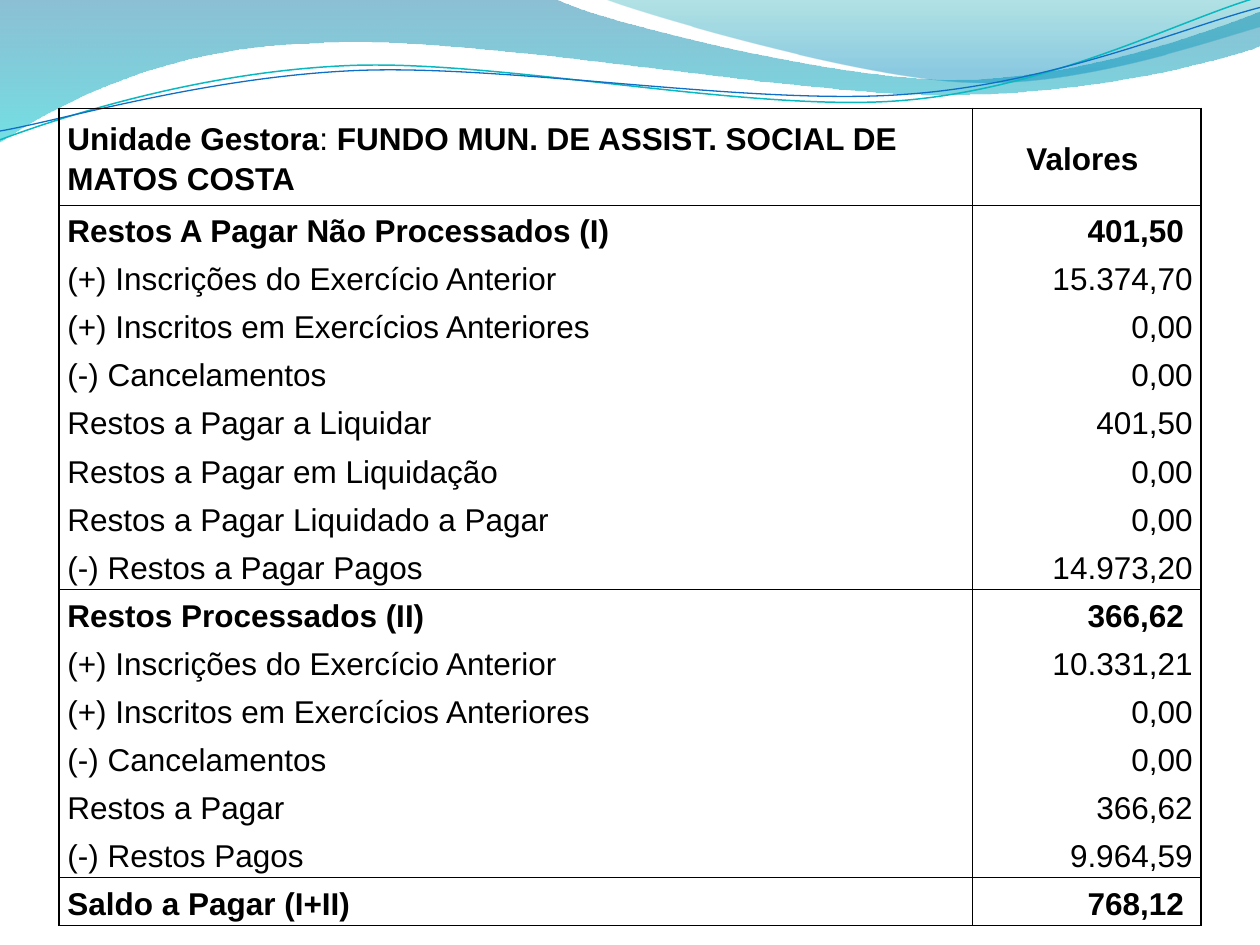
from math import cos, radians, sin
from lxml.etree import SubElement
from pptx import Presentation
from pptx.dml.color import RGBColor
from pptx.enum.text import MSO_ANCHOR as Anchor, PP_ALIGN as Align
from pptx.oxml import parse_xml
from pptx.oxml.ns import nsdecls, qn
from pptx.util import Inches, Pt

BLACK = RGBColor(0, 0, 0)
TEAL = RGBColor(0x0A, 0xB8, 0xBF)
BLUE = RGBColor(0x0F, 0x6F, 0xC6)
NO_STYLE = "{2D5ABB26-0587-4C30-8999-92F81FD0307C}"

# Table content: each group opens with a bold row
HEAD = [("Unidade Gestora", True), (": ", False),
        ("FUNDO MUN. DE ASSIST. SOCIAL DE MATOS COSTA", True)]
GROUPS = [
    [("Restos A Pagar Não Processados (I)", "401,50 "),
     ("(+) Inscrições do Exercício Anterior", "15.374,70"),
     ("(+) Inscritos em Exercícios Anteriores", "0,00"),
     ("(-) Cancelamentos", "0,00"),
     ("Restos a Pagar a Liquidar", "401,50"),
     ("Restos a Pagar em Liquidação", "0,00"),
     ("Restos a Pagar Liquidado a Pagar", "0,00"),
     ("(-) Restos a Pagar Pagos", "14.973,20")],
    [("Restos Processados (II)", "366,62 "),
     ("(+) Inscrições do Exercício Anterior", "10.331,21"),
     ("(+) Inscritos em Exercícios Anteriores", "0,00"),
     ("(-) Cancelamentos", "0,00"),
     ("Restos a Pagar", "366,62"),
     ("(-) Restos Pagos", "9.964,59")],
    [("Saldo a Pagar (I+II)", "768,12 ")],
]
COLS = (7.25, 1.81)
LEFT, TOP, HEIGHT, HEAD_H = 0.47, 0.86, 6.49, 0.77

# Waves: a pair is a straight step, six numbers are a Bézier step
BANDS = [
    ([(0, 0), (4.4, -0.01), (4.76, 0.17, 6.64, 0.63, 7.58, 0.63),
      (8.53, 0.63, 9.58, 0.26, 10, 0.09), (10.01, 0.36),
      (9.83, 0.44, 8.7, 0.76, 7.46, 0.75), (6.22, 0.75, 3.82, 0.28, 2.57, 0.34),
      (1.29, 0.36, 0.46, 0.83, -0.01, 1.13)],
     [(0, RGBColor(0, 0x74, 0xA1), 45), (1, RGBColor(0, 0xC6, 0xCF), 55)]),
    ([(4.79, -0.01), (5.09, 0.11, 6.82, 0.62, 7.69, 0.65),
      (8.56, 0.69, 9.61, 0.32, 10, 0.21), (10, 0)],
     [(0, RGBColor(0, 0xA1, 0xA9), 30), (0.8, RGBColor(0, 0x8B, 0xBF), 45)]),
]
TILT = 357.3
LINES = [
    ([(0, 1.11), (0.48, 0.93, 1.58, 0.57, 2.77, 0.52),
      (3.95, 0.47, 5.93, 0.89, 7.13, 0.8), (8.33, 0.71, 9.38, 0.15, 9.98, -0.02)],
     TEAL, 0.85, (4.99, 0.575)),
    ([(0, 1.04), (0.47, 0.96, 1.64, 0.61, 2.83, 0.56),
      (4.03, 0.51, 5.97, 0.84, 7.17, 0.75), (8.36, 0.67, 9.41, 0.21, 10, 0.06)],
     BLUE, 0.75, (5, 0.59)),
]


def turn(step, mid, angle):
    """Turn every point of a step clockwise about mid."""
    c, s = cos(radians(angle)), sin(radians(angle))
    out = []
    for x, y in zip(step[::2], step[1::2]):
        dx, dy = x - mid[0], y - mid[1]
        out += [mid[0] + dx * c - dy * s, mid[1] + dx * s + dy * c]
    return tuple(out)


def draw(slide, steps, close):
    """Lay out all points as a freeform, then join them into Bézier curves."""
    pts = [(Inches(x), Inches(y)) for step in steps
           for x, y in zip(step[::2], step[1::2])]
    pen = slide.shapes.build_freeform(*pts[0])
    pen.add_line_segments(pts[1:], close=close)
    shape = pen.convert_to_shape()
    shape.shadow.inherit = False
    legs = iter(list(shape._element.iter(qn("a:lnTo"))))
    for step in steps[1:]:
        leg = next(legs)
        if len(step) == 6:
            leg.addprevious(parse_xml(f'<a:cubicBezTo {nsdecls("a")}/>'))
            curve = leg.getprevious()
            for part in (leg, next(legs), next(legs)):
                curve.append(part[0])
                part.getparent().remove(part)
    return shape


def add_band(slide, steps, stops):
    shape = draw(slide, steps, True)
    shape.line.fill.background()
    shape.fill.gradient()
    shape.fill.gradient_angle = 270
    for stop, (pos, color, alpha) in zip(shape.fill.gradient_stops, stops):
        stop.position = pos
        stop.color.rgb = color
        tint = stop.color._xFill.find(qn("a:srgbClr"))
        SubElement(tint, qn("a:alpha")).set("val", str(alpha * 1000))


def add_wave(slide, steps, color, width, mid):
    shape = draw(slide, [turn(step, mid, -TILT) for step in steps], False)
    shape.rotation = TILT
    shape.fill.background()
    shape.line.color.rgb = color
    shape.line.width = Pt(width)


def write(cell, runs, align=Align.LEFT, size=18, font="Arial", color=BLACK):
    cell.vertical_anchor = Anchor.MIDDLE
    cell.margin_left = cell.margin_right = Pt(4.7)
    cell.margin_top = cell.margin_bottom = Inches(0.01)
    para = cell.text_frame.paragraphs[0]
    para.alignment, para.line_spacing = align, 1.15
    for text, bold in runs:
        run = para.add_run()
        run.text = text
        run.font.size, run.font.name, run.font.bold = Pt(size), font, bold
        run.font.color.rgb = color


def edge(cell, sides):
    """Draw black borders on the named sides only, then clear the fill."""
    props = cell._tc.get_or_add_tcPr()
    solid = f'<a:solidFill><a:srgbClr val="{BLACK}"/></a:solidFill>'
    for side in "LRTB":
        paint = solid if side in sides else "<a:noFill/>"
        props.append(parse_xml(
            f'<a:ln{side} {nsdecls("a")} w="12700">{paint}</a:ln{side}>'))
    cell.fill.background()


def add_grid(slide):
    rows = [(HEAD, [("Valores ", True)], "LRTB")]
    for group in GROUPS:
        for i, (name, value) in enumerate(group):
            sides = "LR" + "T" * (i == 0) + "B" * (i == len(group) - 1)
            rows.append(([(name, i == 0)], [(value, i == 0)], sides))
    table = slide.shapes.add_table(
        len(rows), len(COLS), Inches(LEFT), Inches(TOP),
        Inches(sum(COLS)), Inches(HEIGHT)).table
    table.first_row = table.horz_banding = False
    table._tbl.tblPr.find(qn("a:tableStyleId")).text = NO_STYLE
    for col, width in zip(table.columns, COLS):
        col.width = Inches(width)
    row_h = (HEIGHT - HEAD_H) / (len(rows) - 1)
    for r, (name, value, sides) in enumerate(rows):
        table.rows[r].height = Inches(row_h if r else HEAD_H)
        write(table.cell(r, 0), name)
        write(table.cell(r, 1), value, align=Align.RIGHT if r else Align.CENTER)
        for c in range(len(COLS)):
            edge(table.cell(r, c), sides)


def main():
    deck = Presentation()
    deck.slide_width, deck.slide_height = Inches(10), Inches(7.5)
    slide = deck.slides.add_slide(deck.slide_layouts[6])
    for band in BANDS:
        add_band(slide, *band)
    for wave in LINES:
        add_wave(slide, *wave)
    add_grid(slide)
    deck.save("out.pptx")


if __name__ == "__main__":
    main()
